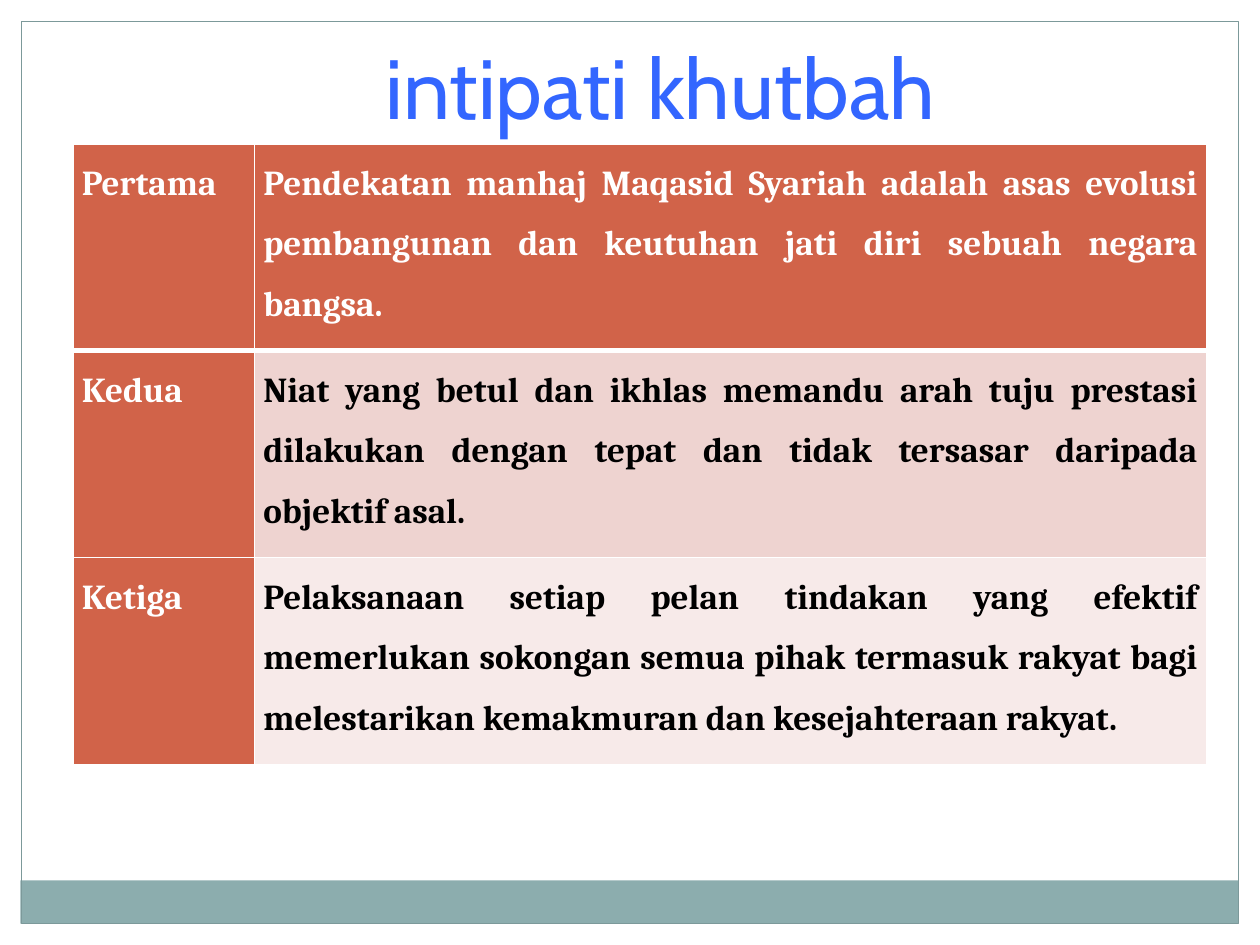
"""Build a slide with a framed page, a title and a table of three sermon points."""
from lxml.etree import SubElement
from pptx import Presentation
from pptx.dml.color import RGBColor
from pptx.enum.shapes import MSO_SHAPE
from pptx.enum.text import MSO_ANCHOR, MSO_AUTO_SIZE, PP_ALIGN
from pptx.oxml.ns import qn
from pptx.util import Cm, Pt

WHITE = RGBColor(0xFF, 0xFF, 0xFF)
BLACK = RGBColor(0x00, 0x00, 0x00)
BLUE = RGBColor(0x33, 0x66, 0xFF)
TEAL = RGBColor(0x8C, 0xAD, 0xAE)
FRAME_TEAL = RGBColor(0x7C, 0x99, 0x9A)
ORANGE = RGBColor(0xD1, 0x63, 0x49)
PINK = RGBColor(0xEE, 0xD3, 0xD0)
PALE_PINK = RGBColor(0xF7, 0xEA, 0xE9)


def write_text(text_frame, text, font, size, color, bold=False,
               align=PP_ALIGN.JUSTIFY, spacing=1.0):
    paragraph = text_frame.paragraphs[0]
    paragraph.alignment = align
    paragraph.line_spacing = spacing
    run = paragraph.add_run()
    run.text = text
    run.font.name = font
    run.font.size = Pt(size)
    run.font.bold = bold
    run.font.color.rgb = color


def add_border(cell, side, points):
    line = SubElement(cell._tc.get_or_add_tcPr(), qn(f"a:{side}"), w=str(Pt(points)))
    SubElement(SubElement(line, qn("a:solidFill")), qn("a:srgbClr"), val=str(WHITE))


presentation = Presentation()
presentation.slide_width = Cm(25.4)
presentation.slide_height = Cm(19.05)
slide = presentation.slides.add_slide(presentation.slide_layouts[5])

page_parts = [
    (0, 0, 25.4, 0.43, WHITE, None),
    (24.97, 0, 0.43, 19.05, WHITE, None),
    (0, 0, 0.43, 19.05, WHITE, None),
    (0.41, 17.75, 24.55, 0.87, TEAL, None),
    (0.43, 0.43, 24.54, 18.19, None, FRAME_TEAL),
]
for left, top, width, height, fill_color, line_color in page_parts:
    shape = slide.shapes.add_shape(
        MSO_SHAPE.RECTANGLE, Cm(left), Cm(top), Cm(width), Cm(height))
    shape.shadow.inherit = False
    if fill_color is None:
        shape.fill.background()
    else:
        shape.fill.solid()
        shape.fill.fore_color.rgb = fill_color
    if line_color is None:
        shape.line.fill.background()
    else:
        shape.line.color.rgb = line_color
        shape.line.width = Pt(0.75)

title = slide.shapes.title
title.left, title.top, title.width, title.height = Cm(6.05), Cm(0.58), Cm(14.53), Cm(2.31)
title.text_frame.word_wrap = False
title.text_frame.auto_size = MSO_AUTO_SIZE.NONE
title.text_frame.vertical_anchor = MSO_ANCHOR.MIDDLE
write_text(title.text_frame, "intipati khutbah", "Cabin", 48, BLUE, align=PP_ALIGN.CENTER)

points = [
    ("Pertama", "Pendekatan manhaj Maqasid Syariah adalah asas evolusi pembangunan "
     "dan keutuhan jati diri sebuah negara bangsa.", ORANGE, WHITE),
    ("Kedua", "Niat yang betul dan ikhlas memandu arah tuju prestasi dilakukan "
     "dengan tepat dan tidak tersasar daripada objektif asal.", PINK, BLACK),
    ("Ketiga", "Pelaksanaan setiap pelan tindakan yang efektif memerlukan sokongan "
     "semua pihak termasuk rakyat bagi melestarikan kemakmuran dan kesejahteraan "
     "rakyat.", PALE_PINK, BLACK),
]
row_height = 4.17
table = slide.shapes.add_table(
    len(points), 2, Cm(1.47), Cm(2.9), Cm(22.86), Cm(row_height * len(points))).table
table.first_col = True
table.columns[0].width = Cm(3.66)
table.columns[1].width = Cm(19.2)

for row_index, (label, sentence, fill_color, text_color) in enumerate(points):
    contents = [(label, ORANGE, WHITE), (sentence, fill_color, text_color)]
    for column_index, (text, cell_color, font_color) in enumerate(contents):
        cell = table.cell(row_index, column_index)
        cell.margin_left = cell.margin_right = Cm(0.18)
        cell.margin_top = cell.margin_bottom = 0
        for side in ("lnL", "lnR", "lnT", "lnB"):
            header_edge = (row_index, side) in ((0, "lnB"), (1, "lnT"))
            add_border(cell, side, 3 if header_edge else 1)
        cell.fill.solid()
        cell.fill.fore_color.rgb = cell_color
        write_text(cell.text_frame, text, "Cambria", 20, font_color, bold=True, spacing=1.5)

presentation.save("out.pptx")
